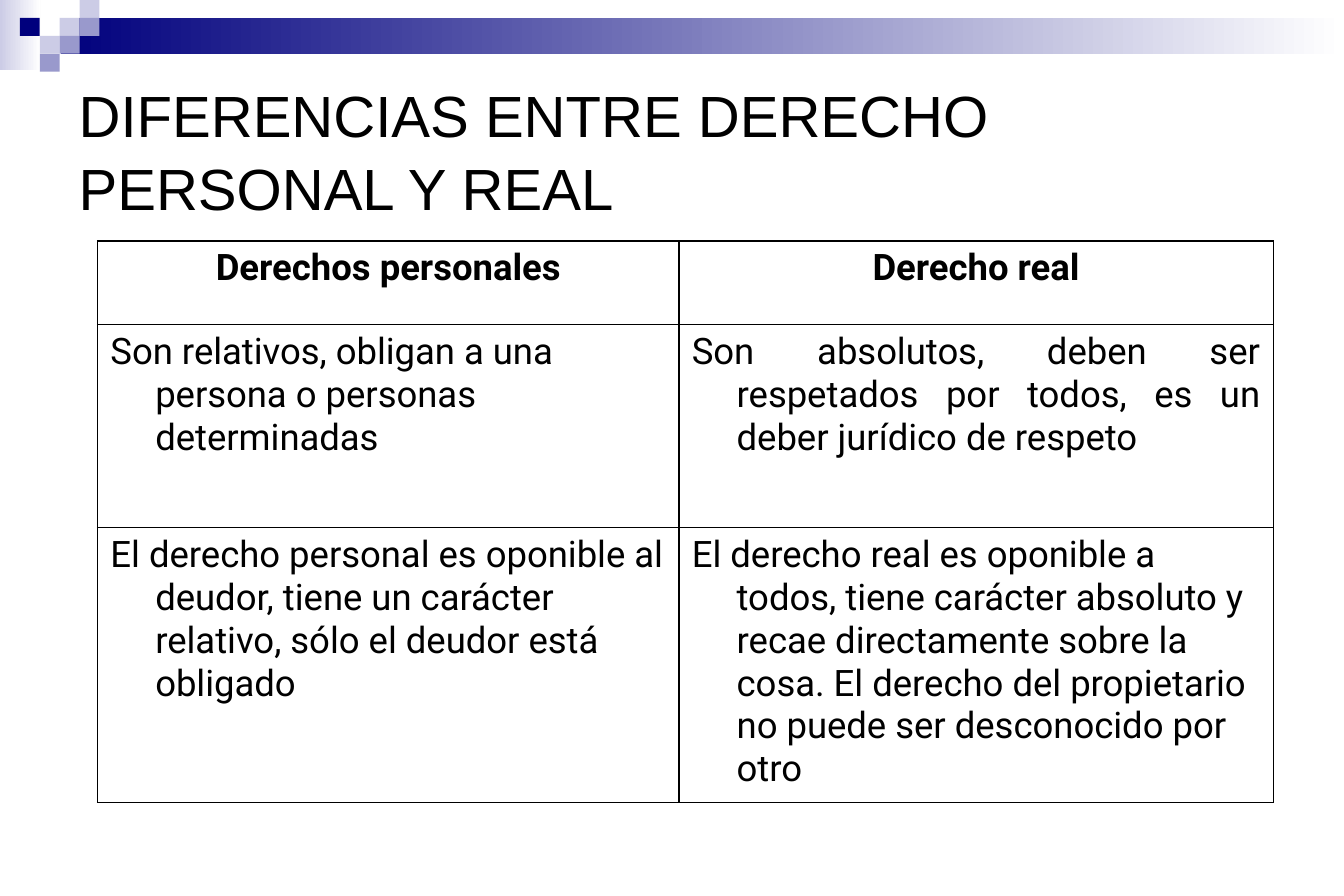
from dataclasses import dataclass

from lxml import etree
from pptx import Presentation
from pptx import util as u
from pptx.dml import color
from pptx.enum import shapes, text
from pptx.oxml import ns

PX = u.Inches(1) // 120
TILE_W, TILE_H = 20, 18


@dataclass(frozen=True)
class Theme:
    navy: str = "00007D"
    periwinkle: str = "9999CC"
    lavender: str = "CCCCE6"
    white: str = "FFFFFF"
    black: str = "000000"
    title_font: str = "Arial"
    title_size: int = 35
    body_font: str = "Roboto"
    body_size: int = 22
    border_width: int = 1


THEME = Theme()

TILES = [
    (3, 1, THEME.lavender),
    (4, 0, THEME.lavender),
    (4, 1, THEME.periwinkle),
    (2, 2, THEME.lavender),
    (1, 1, THEME.navy),
    (3, 2, THEME.periwinkle),
    (2, 3, THEME.periwinkle),
]

COMPARISON = [
    ("Derechos personales", "Derecho real"),
    (
        "Son relativos, obligan a una persona o personas determinadas",
        "Son absolutos, deben ser respetados por todos, es un deber jurídico de respeto",
    ),
    (
        "El derecho personal es oponible al deudor, tiene un carácter relativo, "
        "sólo el deudor está obligado",
        "El derecho real es oponible a todos, tiene carácter absoluto y recae "
        "directamente sobre la cosa. El derecho del propietario no puede ser "
        "desconocido por otro",
    ),
]
COLUMN_WIDTHS = (584, 597)
ROW_HEIGHTS = (84, 204, 276)
JUSTIFIED_CELL = (1, 1)


def px(length):
    return u.Emu(length * PX)


def rgb(value):
    return color.RGBColor.from_string(value)


def apply(target, values):
    for name, value in values.items():
        setattr(target, name, value)


def place(shape, left, top, width, height):
    apply(shape, {"left": px(left), "top": px(top), "width": px(width), "height": px(height)})


def style_font(font, name, size, bold=False):
    apply(font, {"name": name, "size": u.Pt(size), "bold": bold})
    font.color.rgb = rgb(THEME.black)


def add_block(slide, left, top, width, height):
    block = slide.shapes.add_shape(
        shapes.MSO_SHAPE.RECTANGLE, px(left), px(top), px(width), px(height)
    )
    block.shadow.inherit = False
    block.line.fill.background()
    return block


def add_tile(slide, column, row, tone):
    tile = add_block(slide, column * TILE_W, row * TILE_H, TILE_W, TILE_H)
    tile.fill.solid()
    tile.fill.fore_color.rgb = rgb(tone)


def add_fade(slide, left, top, width, height, tone):
    fade = add_block(slide, left, top, width, height)
    fade.fill.gradient()
    fade.fill.gradient_angle = 0
    for stop, position, shade in zip(fade.fill.gradient_stops, (0, 1), (tone, THEME.white)):
        stop.position = position
        stop.color.rgb = rgb(shade)


def write_title(slide, wording):
    title = slide.shapes.title
    place(title, 67, 60, 1214, 180)
    apply(title.text_frame, {
        "text": wording,
        "word_wrap": True,
        "auto_size": text.MSO_AUTO_SIZE.NONE,
        "vertical_anchor": text.MSO_ANCHOR.MIDDLE,
    })
    heading = title.text_frame.paragraphs[0]
    apply(heading, {"alignment": text.PP_ALIGN.LEFT, "line_spacing": 1.05})
    style_font(heading.runs[0].font, THEME.title_font, THEME.title_size)


def draw_borders(cell):
    properties = cell._tc.get_or_add_tcPr()
    for side in ("lnL", "lnR", "lnT", "lnB"):
        border = etree.SubElement(properties, ns.qn(f"a:{side}"), w=str(u.Pt(THEME.border_width)))
        fill = etree.SubElement(border, ns.qn("a:solidFill"))
        etree.SubElement(fill, ns.qn("a:srgbClr"), val=THEME.black)


def write_cell(cell, wording, alignment, bold):
    draw_borders(cell)
    cell.fill.background()
    apply(cell, {
        "text": wording,
        "margin_left": px(13),
        "margin_right": px(13),
        "margin_top": px(6),
        "margin_bottom": px(6),
    })
    statement = cell.text_frame.paragraphs[0]
    statement.alignment = alignment
    hanging = px(45)
    indents = statement._p.get_or_add_pPr()
    indents.set("marL", str(hanging))
    indents.set("indent", str(-hanging))
    style_font(statement.runs[0].font, THEME.body_font, THEME.body_size, bold)


def cell_alignment(row, column):
    if row == 0:
        return text.PP_ALIGN.CENTER
    if (row, column) == JUSTIFIED_CELL:
        return text.PP_ALIGN.JUSTIFY
    return text.PP_ALIGN.LEFT


def add_comparison(slide, left, top):
    comparison = slide.shapes.add_table(
        len(ROW_HEIGHTS), len(COLUMN_WIDTHS), px(left), px(top),
        px(sum(COLUMN_WIDTHS)), px(sum(ROW_HEIGHTS)),
    ).table
    apply(comparison, {"first_row": False, "horz_banding": False})
    for column, width in zip(comparison.columns, COLUMN_WIDTHS):
        column.width = px(width)
    for row, height in zip(comparison.rows, ROW_HEIGHTS):
        row.height = px(height)
    for row, statements in enumerate(COMPARISON):
        for column, wording in enumerate(statements):
            write_cell(comparison.cell(row, column), wording,
                       cell_alignment(row, column), row == 0)


def main():
    deck = Presentation()
    apply(deck, {"slide_width": px(1350), "slide_height": px(900)})
    slide = deck.slides.add_slide(deck.slide_layouts[5])
    add_fade(slide, 0, 0, 41, 70, THEME.lavender)
    add_fade(slide, 61, 18, 1289, 36, THEME.navy)
    for column, row, tone in TILES:
        add_tile(slide, column, row, tone)
    write_title(slide, "DIFERENCIAS ENTRE DERECHO PERSONAL Y REAL")
    add_comparison(slide, 98, 242)
    deck.save("out.pptx")


if __name__ == "__main__":
    main()
